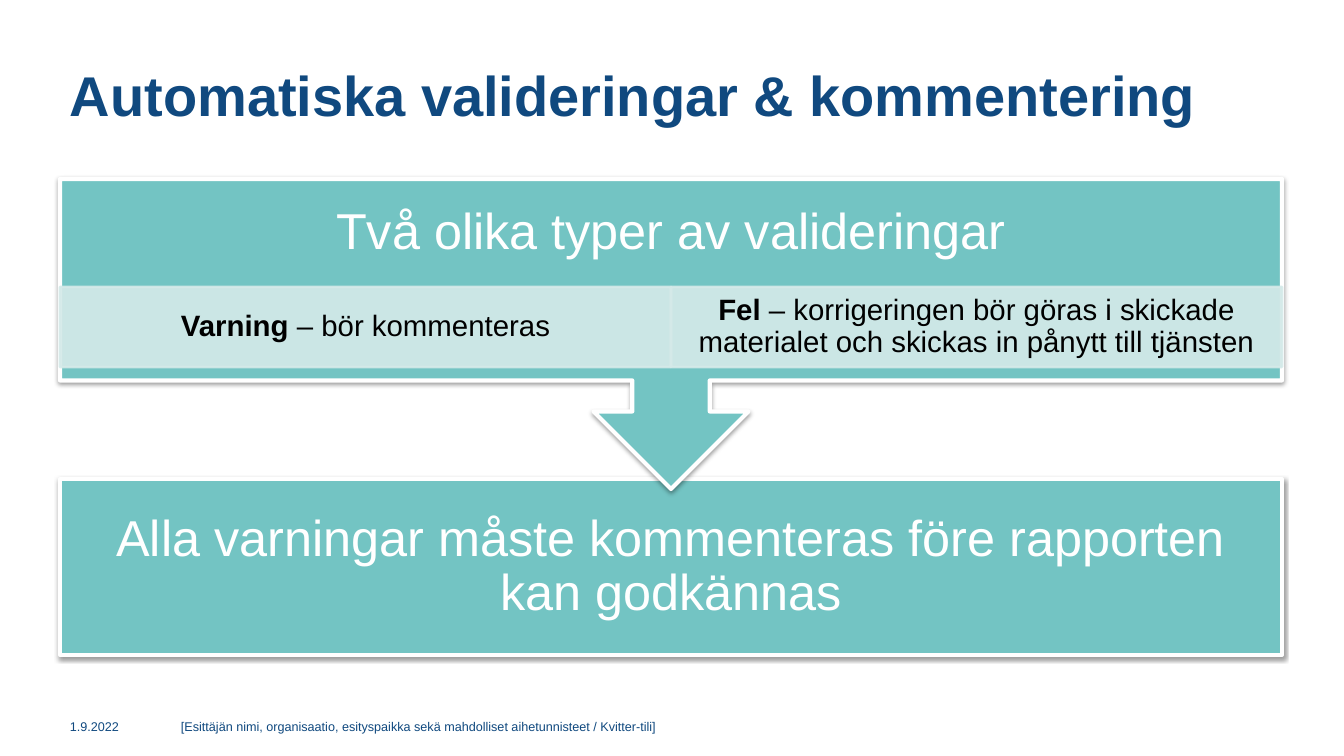
import pptx
import pptx.dml.color
import pptx.enum.shapes
import pptx.enum.text
import pptx.oxml
import pptx.oxml.ns
import pptx.util

EMU_PER_PX = 914400 / 100.8
SHAPES = pptx.enum.shapes.MSO_SHAPE
ANCHOR = pptx.enum.text.MSO_ANCHOR
ALIGN = pptx.enum.text.PP_ALIGN

SHADOW_XML = (
    '<a:outerShdw xmlns:a="http://schemas.openxmlformats.org/drawingml/2006/main"'
    ' blurRad="39400" dist="20300" dir="5400000" rotWithShape="0">'
    '<a:srgbClr val="000000"><a:alpha val="38000"/></a:srgbClr></a:outerShdw>'
)


def px(length):
    return pptx.util.Emu(round(length * EMU_PER_PX))


def color(hex_string):
    return pptx.dml.color.RGBColor.from_string(hex_string)


class SlideBuilder:
    FONT = "Arial"
    NAVY = "10497F"
    TEAL = "73C4C3"
    PALE_TEAL = "D5EAE9"
    WHITE = "FFFFFF"
    BLACK = "000000"

    def __init__(self, slide):
        self.slide = slide

    def set_text(self, shape, text, size, font_color, bold_lead="", bold=False,
                 align=ALIGN.LEFT, anchor=ANCHOR.MIDDLE, spacing=1.0, insets=(10, 5)):
        """Fill a shape with one paragraph; insets are (horizontal, vertical) px."""
        frame = shape.text_frame
        frame.word_wrap = True
        frame.vertical_anchor = anchor
        frame.margin_left = frame.margin_right = px(insets[0])
        frame.margin_top = frame.margin_bottom = px(insets[1])
        paragraph = frame.paragraphs[0]
        paragraph.alignment = align
        paragraph.line_spacing = spacing
        for part, is_bold in ((bold_lead, True), (text, bold)):
            if part:
                run = paragraph.add_run()
                run.text = part
                run.font.name = self.FONT
                run.font.size = pptx.util.Pt(size)
                run.font.bold = is_bold
                run.font.color.rgb = color(font_color)

    def text_box(self, left, top, width, height, text, **text_format):
        box = self.slide.shapes.add_textbox(px(left), px(top), px(width), px(height))
        self.set_text(box, text, **text_format)

    def block(self, kind, left, top, width, height, fill, line, line_width):
        shape = self.slide.shapes.add_shape(kind, px(left), px(top), px(width), px(height))
        shape.shadow.inherit = False
        shape.fill.solid()
        shape.fill.fore_color.rgb = color(fill)
        shape.line.color.rgb = color(line)
        shape.line.width = pptx.util.Pt(line_width)
        return shape

    def step(self, kind, left, top, width, height):
        """Add a teal block with a white outline and a soft shadow below it."""
        shape = self.block(kind, left, top, width, height, self.TEAL, self.WHITE, 3)
        effects = shape._element.spPr.find(pptx.oxml.ns.qn("a:effectLst"))
        effects.append(pptx.oxml.parse_xml(SHADOW_XML))
        return shape

    def type_cell(self, left, top, width, height, name, description):
        """Add a pale, slightly transparent cell for one type of validation."""
        shape = self.block(SHAPES.RECTANGLE, left, top, width, height,
                           self.PALE_TEAL, self.PALE_TEAL, 2)
        for element in shape._element.spPr.iter(pptx.oxml.ns.qn("a:srgbClr")):
            alpha = element.makeelement(pptx.oxml.ns.qn("a:alpha"), {"val": "90000"})
            element.append(alpha)
        self.set_text(shape, description, bold_lead=name, size=21, font_color=self.BLACK,
                      align=ALIGN.CENTER, spacing=0.9, insets=(16, 3))


def main():
    presentation = pptx.Presentation()
    presentation.slide_width = px(1344)
    presentation.slide_height = px(756)
    builder = SlideBuilder(presentation.slides.add_slide(presentation.slide_layouts[6]))

    left, width = 60, 1222
    builder.text_box(left, 60, width, 147, "Automatiska valideringar & kommentering",
                     size=40, font_color=builder.NAVY, bold=True,
                     anchor=ANCHOR.TOP, spacing=0.95)

    footers = (
        (60, 107, "1.9.2022"),
        (171, 789, "[Esittäjän nimi, organisaatio, esityspaikka sekä mahdolliset "
                   "aihetunnisteet / Kvitter-tili]"),
    )
    for footer_left, footer_width, text in footers:
        builder.text_box(footer_left, 707, footer_width, 39, text,
                         size=9, font_color=builder.NAVY)

    heading = dict(size=36, font_color=builder.WHITE, align=ALIGN.CENTER,
                   spacing=0.9, insets=(28, 28))
    conclusion = builder.step(SHAPES.RECTANGLE, left, 479, width, 176)
    builder.set_text(conclusion, "Alla varningar måste kommenteras före rapporten kan godkännas",
                     **heading)

    callout = builder.step(SHAPES.UP_ARROW_CALLOUT, left, 179, width, 310)
    callout.rotation = 180
    builder.text_box(left, 179, width, 108, "Två olika typer av valideringar", **heading)

    validation_types = (
        ("Varning", " – bör kommenteras"),
        ("Fel", " – korrigeringen bör göras i skickade materialet "
                "och skickas in pånytt till tjänsten"),
    )
    cell_width = width // len(validation_types)
    for index, (name, description) in enumerate(validation_types):
        builder.type_cell(left + index * cell_width, 287, cell_width, 80, name, description)

    presentation.save("out.pptx")


if __name__ == "__main__":
    main()
